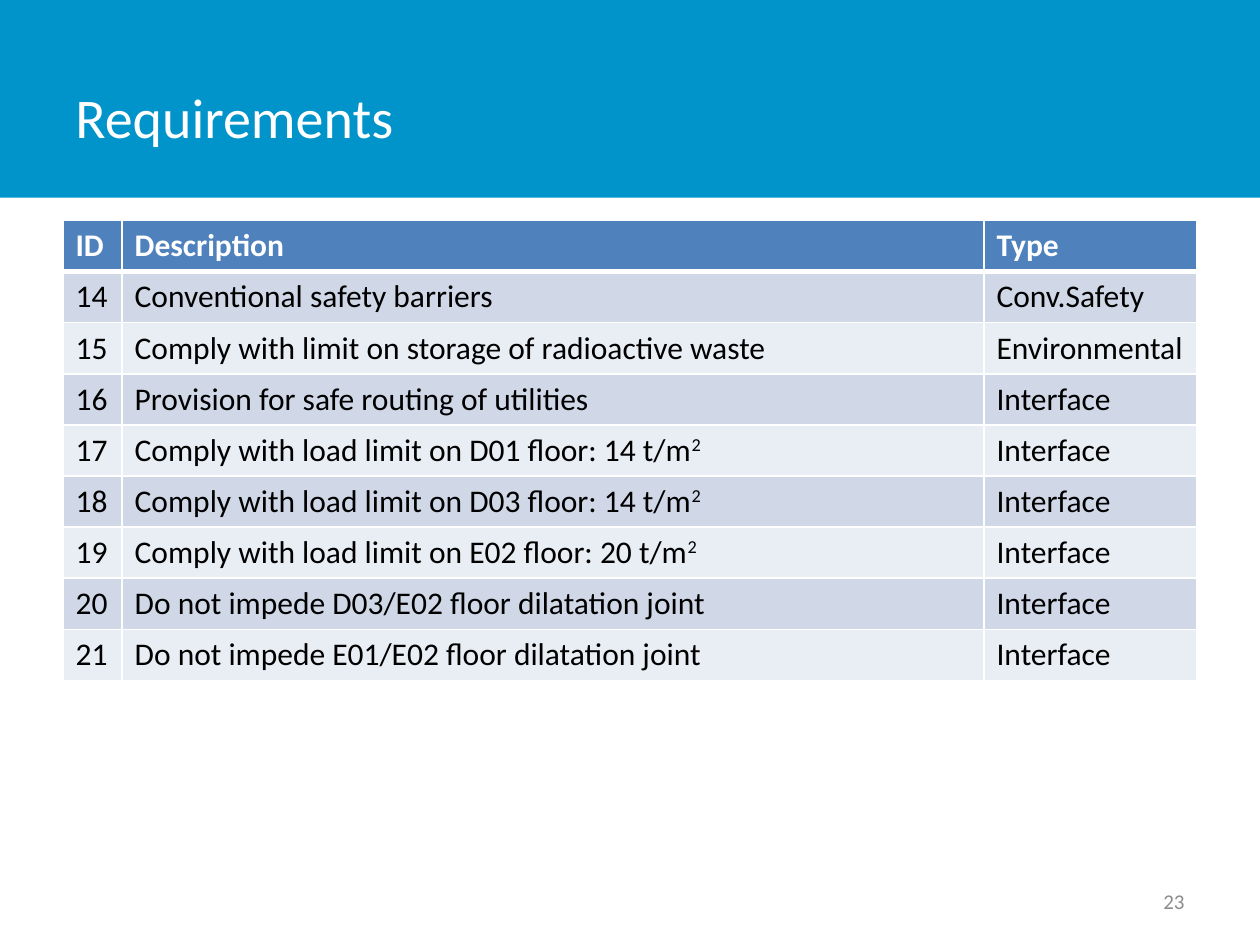
from lxml import etree
from pptx import Presentation
from pptx.dml.color import RGBColor
from pptx.enum import shapes as sh, text as tx
from pptx.oxml import ns
from pptx.util import Pt

FONT = "Calibri"
WHITE, BLACK, GREY = "FFFFFF", "000000", "8C8C8C"
BLUE, HEAD = "0094CA", "4F81BD"
BANDS = ("D0D8E8", "E9EDF4")
WIDTHS = (33.8, 492.5, 121.7)

HEADS = ("ID", "Description", "Type")
FIRST = 14
# A caret marks the start of a superscript
ITEMS = (
    ("Conventional safety barriers", "Conv.Safety"),
    ("Comply with limit on storage of radioactive waste", "Environmental"),
    ("Provision for safe routing of utilities", "Interface"),
    ("Comply with load limit on D01 floor: 14 t/m^2", "Interface"),
    ("Comply with load limit on D03 floor: 14 t/m^2", "Interface"),
    ("Comply with load limit on E02 floor: 20 t/m^2", "Interface"),
    ("Do not impede D03/E02 floor dilatation joint", "Interface"),
    ("Do not impede E01/E02 floor dilatation joint", "Interface"),
)


def color(code):
    return RGBColor.from_string(code)


def paint(obj, code):
    obj.fill.solid()
    obj.fill.fore_color.rgb = color(code)


def write(par, words, size, code, bold=False):
    for i, part in enumerate(words.split("^")):
        run = par.add_run()
        run.text = part
        font = run.font
        font.name, font.size, font.bold = FONT, Pt(size), bold
        font.color.rgb = color(code)
        if i:
            run._r.get_or_add_rPr().set("baseline", "30000")


def label(slide, box, words, size, code, align):
    frame = slide.shapes.add_textbox(*map(Pt, box)).text_frame
    frame.word_wrap = True
    frame.vertical_anchor = tx.MSO_ANCHOR.MIDDLE
    par = frame.paragraphs[0]
    par.alignment = align
    write(par, words, size, code)


def banner(slide, box):
    left, top, width, height = box
    band = slide.shapes.add_shape(sh.MSO_SHAPE.RECTANGLE, *map(Pt, box))
    band.shadow.inherit = False
    paint(band, BLUE)
    band.line.fill.background()
    label(slide, (left + 36, top + 21.6, 562.3, 90), "Requirements",
          32, WHITE, tx.PP_ALIGN.LEFT)


def border(cell, side, width):
    props = cell._tc.get_or_add_tcPr()
    line = etree.SubElement(props, ns.qn("a:ln" + side), w=str(Pt(width)))
    fill = etree.SubElement(line, ns.qn("a:solidFill"))
    etree.SubElement(fill, ns.qn("a:srgbClr"), val=WHITE)


def grid(slide, box):
    rows = [HEADS] + [(str(FIRST + i), *item) for i, item in enumerate(ITEMS)]
    table = slide.shapes.add_table(
        len(rows), len(HEADS), *map(Pt, box)).table
    for col, width in zip(table.columns, WIDTHS):
        col.width = Pt(width)
    for r, row in enumerate(rows):
        table.rows[r].height = Pt(box[3] / len(rows))
        top = r == 0
        for c, words in enumerate(row):
            cell = table.cell(r, c)
            # The rule under the header is thicker
            for side in "LRTB":
                thick = (side == "B" and r == 0) or (side == "T" and r == 1)
                border(cell, side, 3 if thick else 1)
            paint(cell, HEAD if top else BANDS[(r - 1) % 2])
            write(cell.text_frame.paragraphs[0], words, 18,
                  WHITE if top else BLACK, top)


def main():
    deck = Presentation()
    deck.slide_width, deck.slide_height = Pt(720), Pt(540)
    slide = deck.slides.add_slide(deck.slide_layouts[6])
    paint(slide.background, WHITE)
    banner(slide, (0, 0, 720, 113))
    grid(slide, (36, 126, 648, 262.8))
    # Page number
    label(slide, (516, 500.5, 168, 28.8), "23", 12, GREY, tx.PP_ALIGN.RIGHT)
    deck.save("out.pptx")


if __name__ == "__main__":
    main()
